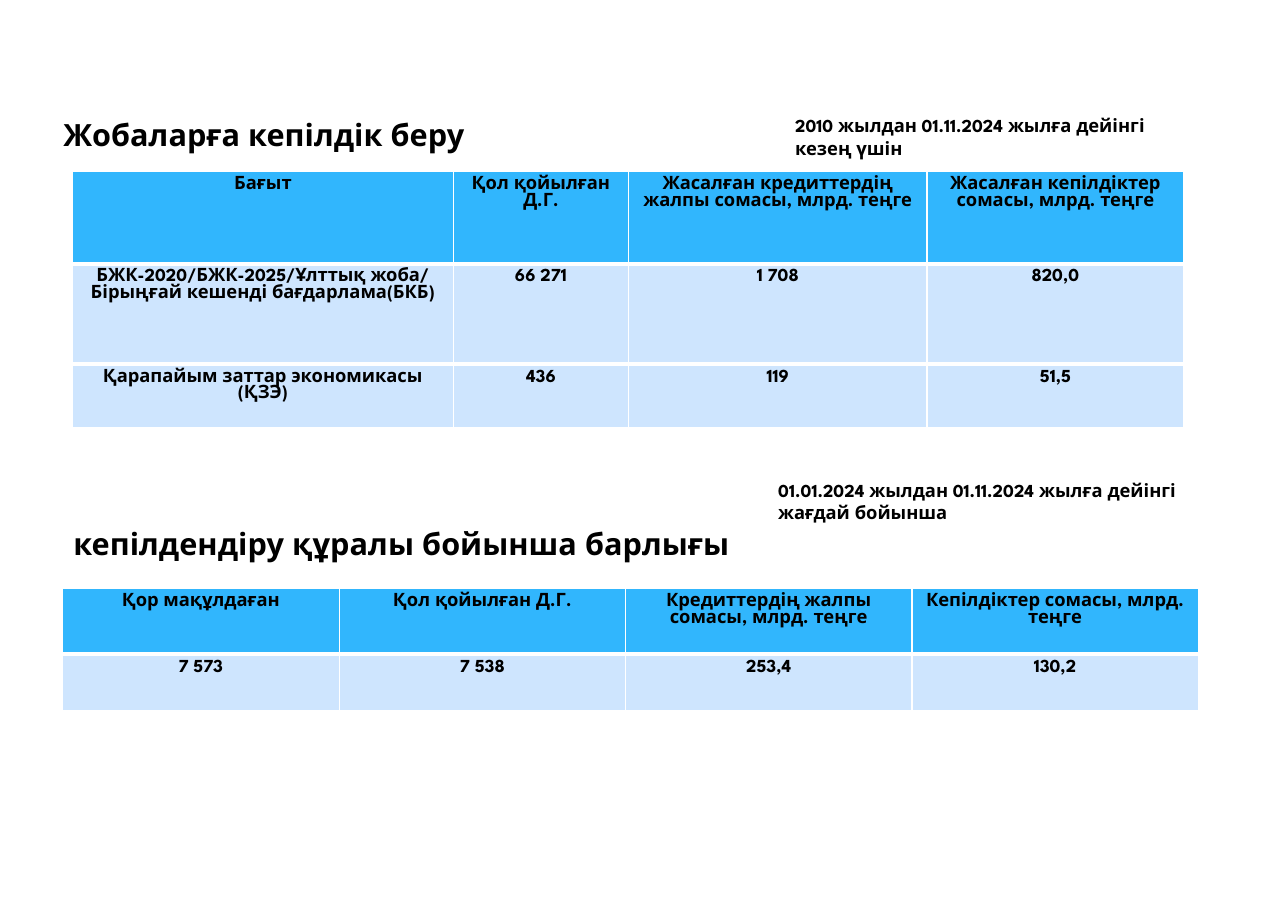
from dataclasses import dataclass

from lxml import etree
from pptx import Presentation
from pptx import util as u
from pptx.dml.color import RGBColor
from pptx.enum import text
from pptx.oxml import ns


@dataclass(frozen=True)
class Theme:
    font: str = "League Spartan"
    ink: str = "000000"
    header: str = "31B6FD"
    body: str = "CEE5FE"
    rule: str = "FFFFFF"
    title_size: int = 20
    text_size: int = 12
    cell_spacing: float = 0.99
    thin: int = 1
    thick: int = 3


theme = Theme()


def write(frame, words, size=theme.text_size, align=text.PP_ALIGN.LEFT, spacing=None):
    para = frame.paragraphs[0]
    para.alignment = align
    if spacing:
        para.line_spacing = spacing
    span = para.add_run()
    span.text = words
    span.font.name = theme.font
    span.font.size = u.Pt(size)
    span.font.bold = True
    span.font.color.rgb = RGBColor.from_string(theme.ink)


def draw_border(cell, side, points):
    line = etree.SubElement(cell._tc.get_or_add_tcPr(), ns.qn(f"a:ln{side}"), w=str(u.Pt(points)))
    fill = etree.SubElement(line, ns.qn("a:solidFill"))
    etree.SubElement(fill, ns.qn("a:srgbClr"), val=theme.rule)


deck = Presentation()
deck.slide_width, deck.slide_height = u.Cm(29.69), u.Cm(21.01)
page = deck.slides.add_slide(deck.slide_layouts[6])

# Titles and reporting periods
captions = [
    ("2010 жылдан 01.11.2024 жылға дейінгі кезең үшін",
     (18.08, 2.52, 9.22, 1.27), theme.text_size),
    ("Жобаларға кепілдік беру", (1.21, 2.54, 18.39, 1.12), theme.title_size),
    ("кепілдендіру құралы бойынша барлығы", (1.44, 11.97, 17.83, 1.12), theme.title_size),
    ("01.01.2024 жылдан 01.11.2024 жылға дейінгі жағдай бойынша",
     (17.69, 10.92, 10.01, 1.27), theme.text_size),
]
for words, place, size in captions:
    box = page.shapes.add_textbox(*map(u.Cm, place))
    box.text_frame.word_wrap = True
    write(box.text_frame, words, size=size)

# Table contents: corner, column widths, row heights, rows
tables = [
    ((1.67, 3.95), (8.78, 4.04, 6.88, 5.92), (2.13, 2.31, 1.48), [
        ("Бағыт", "Қол қойылған Д.Г.", "Жасалған кредиттердің жалпы сомасы, млрд. теңге",
         "Жасалған кепілдіктер сомасы, млрд. теңге"),
        ("БЖК-2020/БЖК-2025/Ұлттық жоба/ Бірыңғай кешенді бағдарлама(БКБ)",
         "66 271", "1 708", "820,0"),
        ("Қарапайым заттар экономикасы (ҚЗЭ)", "436", "119", "51,5"),
    ]),
    ((1.44, 13.57), (6.38, 6.6, 6.6, 6.6), (1.52, 1.3), [
        ("Қор мақұлдаған", "Қол қойылған Д.Г.", "Кредиттердің жалпы сомасы, млрд. теңге",
         "Кепілдіктер сомасы, млрд. теңге"),
        ("7 573", "7 538", "253,4", "130,2"),
    ]),
]

# Tables, with thick rules between rows and thin ones elsewhere
for corner, widths, heights, rows in tables:
    extent = sum(widths), sum(heights)
    grid = page.shapes.add_table(len(rows), len(widths), *map(u.Cm, corner + extent)).table
    for column, width in zip(grid.columns, widths):
        column.width = u.Cm(width)
    for r, (height, values) in enumerate(zip(heights, rows)):
        grid.rows[r].height = u.Cm(height)
        top = theme.thick if r else theme.thin
        bottom = theme.thick if r < len(rows) - 1 else theme.thin
        for c, words in enumerate(values):
            cell = grid.cell(r, c)
            for side, points in zip("LRTB", (theme.thin, theme.thin, top, bottom)):
                draw_border(cell, side, points)
            cell.fill.solid()
            cell.fill.fore_color.rgb = RGBColor.from_string(theme.body if r else theme.header)
            write(cell.text_frame, words, align=text.PP_ALIGN.CENTER,
                  spacing=theme.cell_spacing)

deck.save("out.pptx")
